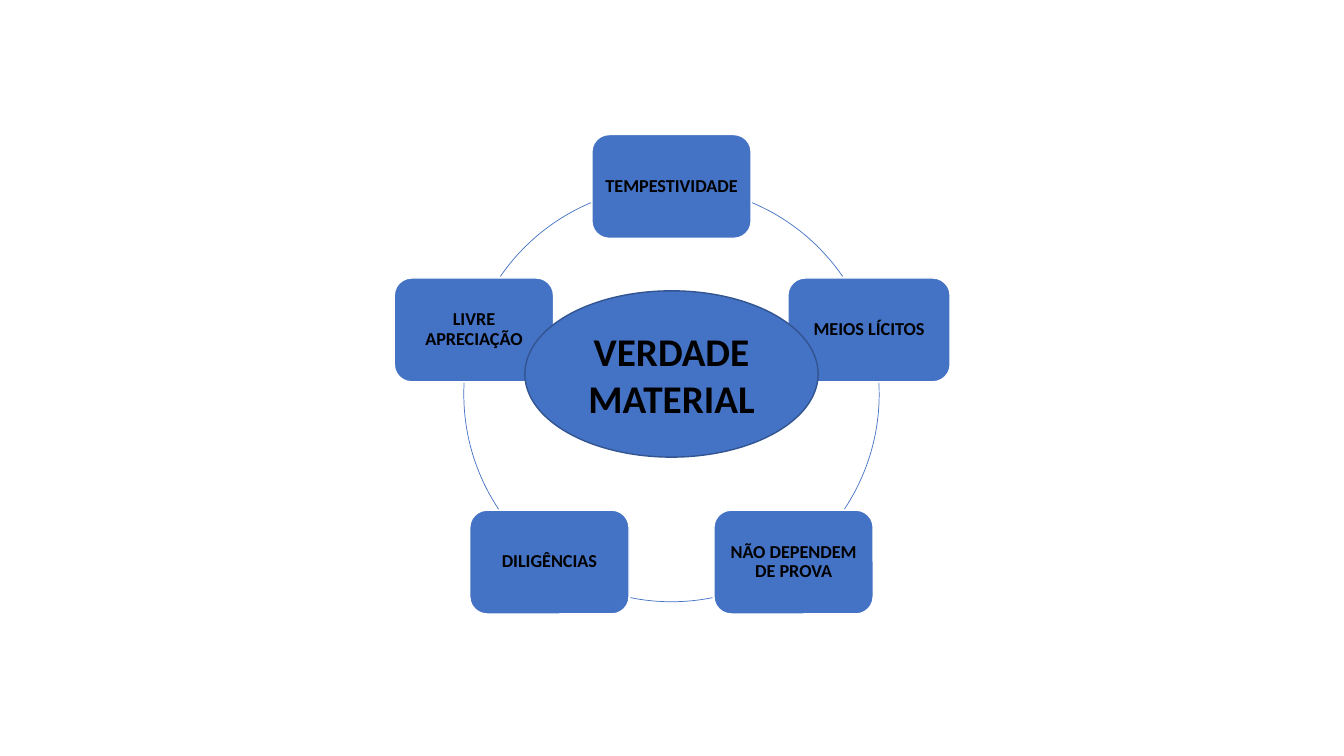
"""Builds a slide with five evidence principles circling the material truth."""
from math import cos, radians, sin

from pptx import Presentation
from pptx.dml.color import RGBColor
from pptx.enum.shapes import MSO_SHAPE
from pptx.enum.text import MSO_ANCHOR, PP_ALIGN
from pptx.util import Inches, Pt

BLUE = RGBColor(0x44, 0x72, 0xC4)
DARK_BLUE = RGBColor(0x32, 0x54, 0x91)
WHITE = RGBColor(0xFF, 0xFF, 0xFF)
BLACK = RGBColor(0x00, 0x00, 0x00)

CENTRE_TEXT = "VERDADE MATERIAL"
# label, box width, start and end angle of the arc that follows it
PRINCIPLES = [
    ("TEMPESTIVIDADE", 1.58, 292.8, 325.5),
    ("MEIOS LÍCITOS", 1.61, 356.8, 33.7),
    ("NÃO DEPENDEM DE PROVA", 1.58, 78.6, 101.4),
    ("DILIGÊNCIAS", 1.58, 146.3, 183.2),
    ("LIVRE APRECIAÇÃO", 1.58, 214.5, 247.2),
]
CX, CY, RADIUS = 6.66, 3.91, 2.06
BOX_H = 1.03
ARC_UNITS_PER_DEGREE = 0.6


def add_centred(slide, kind, cx, cy, w, h, line, weight):
    s = slide.shapes.add_shape(kind, Inches(cx - w / 2), Inches(cy - h / 2),
                               Inches(w), Inches(h))
    s.shadow.inherit = False
    s.line.color.rgb = line
    s.line.width = Pt(weight)
    return s


def add_label(s, text, size, spacing=1.0):
    s.fill.solid()
    s.fill.fore_color.rgb = BLUE
    tf = s.text_frame
    tf.word_wrap = True
    tf.vertical_anchor = MSO_ANCHOR.MIDDLE
    p = tf.paragraphs[0]
    p.alignment = PP_ALIGN.CENTER
    p.line_spacing = spacing
    r = p.add_run()
    r.text = text
    r.font.name = "Calibri"
    r.font.size = Pt(size)
    r.font.bold = True
    r.font.color.rgb = BLACK
    return tf


def main():
    prs = Presentation()
    prs.slide_width, prs.slide_height = Inches(13.33), Inches(7.5)
    slide = prs.slides.add_slide(prs.slide_layouts[6])

    for i, (label, width, start, end) in enumerate(PRINCIPLES):
        angle = radians(360 / len(PRINCIPLES) * i - 90)
        box = add_centred(slide, MSO_SHAPE.ROUNDED_RECTANGLE,
                          CX + RADIUS * cos(angle), CY + RADIUS * sin(angle),
                          width, BOX_H, WHITE, 1)
        tf = add_label(box, label, 13, 0.9)
        tf.margin_left = tf.margin_right = Inches(0.05)
        tf.margin_top = tf.margin_bottom = Inches(0.05)

        arc = add_centred(slide, MSO_SHAPE.ARC, CX, CY,
                          2 * RADIUS, 2 * RADIUS, BLUE, 0.5)
        arc.fill.background()
        arc.adjustments[0] = start * ARC_UNITS_PER_DEGREE
        arc.adjustments[1] = end * ARC_UNITS_PER_DEGREE

    core = add_centred(slide, MSO_SHAPE.OVAL, CX, 3.71, 2.91, 1.65, DARK_BLUE, 1)
    add_label(core, CENTRE_TEXT, 28)
    prs.save("out.pptx")


if __name__ == "__main__":
    main()
